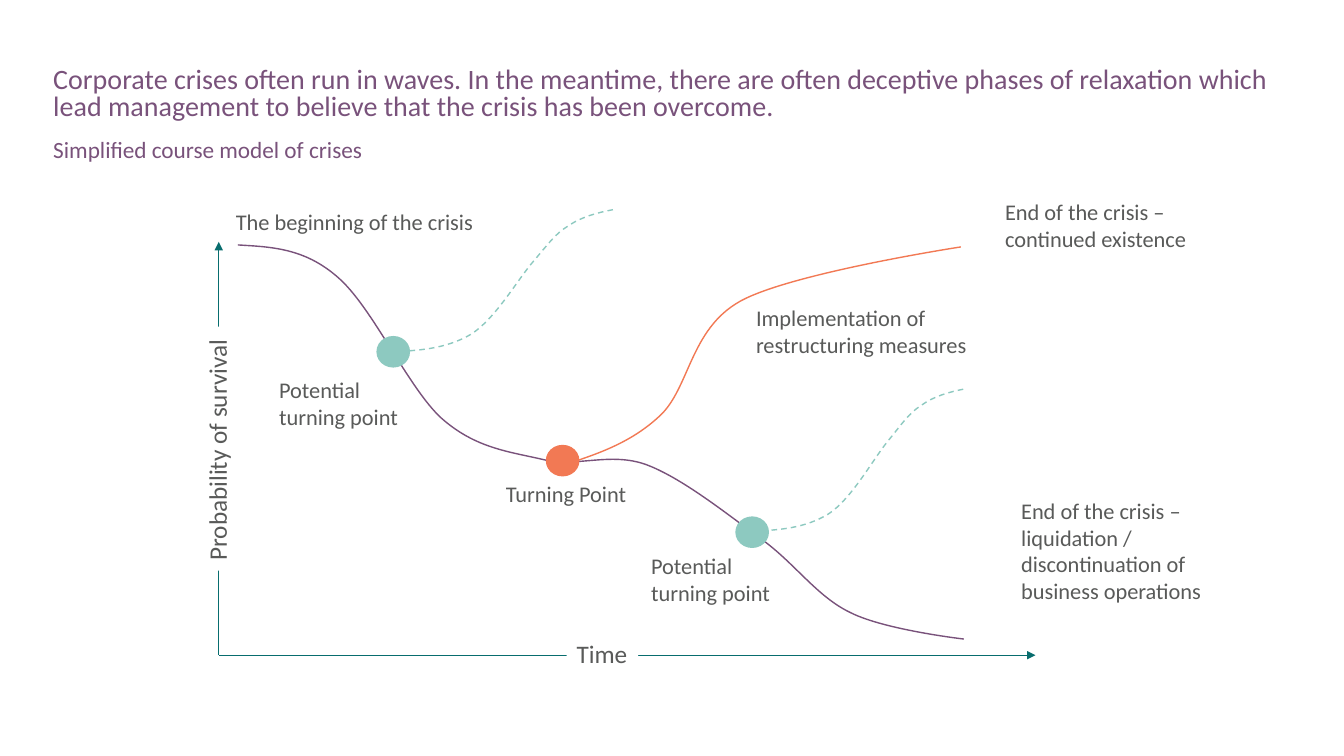
from dataclasses import dataclass

from lxml.etree import SubElement
from pptx import Presentation
from pptx.dml.color import RGBColor
from pptx.enum.dml import MSO_LINE
from pptx.enum.shapes import MSO_CONNECTOR, MSO_SHAPE
from pptx.oxml.ns import qn
from pptx.util import Inches, Pt


@dataclass(frozen=True)
class Theme:
    """Colours, font and type sizes of the slide."""
    font: str = "Calibri"
    decline: RGBColor = RGBColor(0x79, 0x52, 0x7B)
    recovery: RGBColor = RGBColor(0xF2, 0x79, 0x54)
    relief: RGBColor = RGBColor(0x8D, 0xC9, 0xC0)
    axis: RGBColor = RGBColor(0x08, 0x6D, 0x6E)
    ink: RGBColor = RGBColor(0x59, 0x5A, 0x59)
    paper: RGBColor = RGBColor(0xFF, 0xFF, 0xFF)
    headline: float = 20
    subtitle: float = 16.6
    axis_title: float = 18
    label: float = 16


class CrisisSlide:
    """Draws the elements of the crisis model on one slide."""

    def __init__(self, slide, theme):
        self.shapes = slide.shapes
        self.theme = theme

    def text(self, words, left, top, width, height, size=None, color=None,
             spacing=None, fill=None, rotation=0, wrap=True):
        """Add a text box; line breaks in words stay in one paragraph."""
        box = self.shapes.add_textbox(
            Inches(left), Inches(top), Inches(width), Inches(height))
        box.rotation = rotation
        if fill is not None:
            box.fill.solid()
            box.fill.fore_color.rgb = fill
        box.text_frame.word_wrap = wrap
        paragraph = box.text_frame.paragraphs[0]
        paragraph.text = words.replace("\n", "\v")
        paragraph.line_spacing = spacing
        paragraph.font.name = self.theme.font
        paragraph.font.size = Pt(size or self.theme.label)
        paragraph.font.color.rgb = color or self.theme.ink

    def axis(self, start, end):
        """Add an axis with an arrowhead at its end."""
        arrow = self.shapes.add_connector(
            MSO_CONNECTOR.STRAIGHT, *map(Inches, (*start, *end)))
        arrow.line.color.rgb = self.theme.axis
        arrow.line.width = Pt(0.75)
        properties = arrow._element.spPr
        SubElement(properties.find(qn("a:ln")), qn("a:tailEnd"), type="triangle")
        SubElement(properties, qn("a:effectLst"))

    def curve(self, points, color, dash=None):
        """Add a Bézier curve: a start, then three points per segment."""
        start, *rest = [(Inches(x), Inches(y)) for x, y in points]
        builder = self.shapes.build_freeform(*start)
        builder.add_line_segments(rest, close=False)
        course = builder.convert_to_shape()
        course.shadow.inherit = False
        course.fill.background()
        course.line.color.rgb = color
        course.line.width = Pt(1)
        course.line.dash_style = dash
        outline = next(course._element.iter(qn("a:path")))
        steps = outline.findall(qn("a:lnTo"))
        for first in range(0, len(steps), 3):
            bezier = SubElement(outline, qn("a:cubicBezTo"))
            for step in steps[first:first + 3]:
                bezier.append(step[0])
                outline.remove(step)

    def relief(self, left, bottom, width):
        """Add a dashed curve of deceptive relaxation."""
        self.curve([(left + x * width, bottom + y) for x, y in RELIEF],
                   self.theme.relief, MSO_LINE.DASH)

    def marker(self, left, top, color):
        """Add a turning point."""
        dot = self.shapes.add_shape(
            MSO_SHAPE.OVAL, Inches(left), Inches(top), Inches(0.32), Inches(0.3))
        dot.shadow.inherit = False
        dot.fill.solid()
        dot.fill.fore_color.rgb = color
        dot.line.color.rgb = color
        dot.line.width = Pt(1)


DECLINE = [
    (2.36, 2.43), (2.69, 2.45), (3.02, 2.46), (3.35, 2.75),
    (3.69, 3.04), (4.05, 3.85), (4.38, 4.15),
    (4.72, 4.45), (5.05, 4.48), (5.39, 4.56),
    (5.72, 4.64), (6.05, 4.48), (6.41, 4.61),
    (6.76, 4.74), (7.2, 5.09), (7.54, 5.34),
    (7.88, 5.58), (8.1, 5.92), (8.44, 6.08),
    (8.78, 6.25), (9.56, 6.34), (9.56, 6.34),
]
RECOVERY = [
    (5.57, 4.62), (5.91, 4.51), (6.25, 4.4), (6.54, 4.13),
    (6.84, 3.86), (6.84, 3.27), (7.34, 2.99),
    (7.84, 2.71), (9.53, 2.45), (9.53, 2.45),
]
RELIEF = [
    (0, 0), (0.13, -0.01), (0.25, -0.03), (0.36, -0.17),
    (0.47, -0.32), (0.57, -0.71), (0.64, -0.89),
    (0.71, -1.07), (0.74, -1.17), (0.8, -1.25),
    (0.86, -1.34), (0.93, -1.38), (1, -1.41),
]
LABELS = [
    ("The beginning of the crisis", 2.24, 2.02, 2.58, 0.37),
    ("Potential\nturning point", 2.67, 3.68, 1.39, 0.64),
    ("Turning Point", 4.92, 4.71, 1.41, 0.37),
    ("Potential\nturning point", 6.36, 5.43, 1.39, 0.64),
    ("Implementation of\nrestructuring measures", 7.4, 2.97, 2.32, 0.64),
    ("End of the crisis – continued existence", 9.87, 1.92, 2.7, 0.64),
    ("End of the crisis – liquidation /\ndiscontinuation of\nbusiness operations",
     10.03, 4.88, 2.46, 1.72),
]


def main():
    """Build and save the slide."""
    deck = Presentation()
    deck.slide_width, deck.slide_height = Inches(13.33), Inches(7.5)
    theme = Theme()
    page = CrisisSlide(deck.slides.add_slide(deck.slide_layouts[6]), theme)

    page.text("Corporate crises often run in waves. In the meantime, there are often "
              "deceptive phases of relaxation which lead management to believe that "
              "the crisis has been overcome.", 0.43, 0.63, 12.54, 0.64,
              size=theme.headline, color=theme.decline, spacing=0.8)
    page.text("Simplified course model of crises", 0.43, 1.35, 12.54, 0.33,
              size=theme.subtitle, color=theme.decline, spacing=0.8)

    origin = (2.17, 6.5)
    page.axis(origin, (2.17, 2.4))
    page.axis(origin, (10.27, 6.5))
    page.text("Time", 5.62, 6.28, 0.71, 0.4, size=theme.axis_title,
              fill=theme.paper, wrap=False)
    page.text("Probability of survival", 0.94, 4.25, 2.42, 0.4,
              size=theme.axis_title, fill=theme.paper, rotation=270, wrap=False)

    page.curve(DECLINE, theme.decline)
    page.curve(RECOVERY, theme.recovery)
    page.relief(7.46, 5.27, 2.1)
    page.relief(3.87, 3.49, 2.21)

    page.marker(3.74, 3.34, theme.relief)
    page.marker(5.42, 4.42, theme.recovery)
    page.marker(7.3, 5.13, theme.relief)
    for label in LABELS:
        page.text(*label)

    deck.save("out.pptx")


if __name__ == "__main__":
    main()
